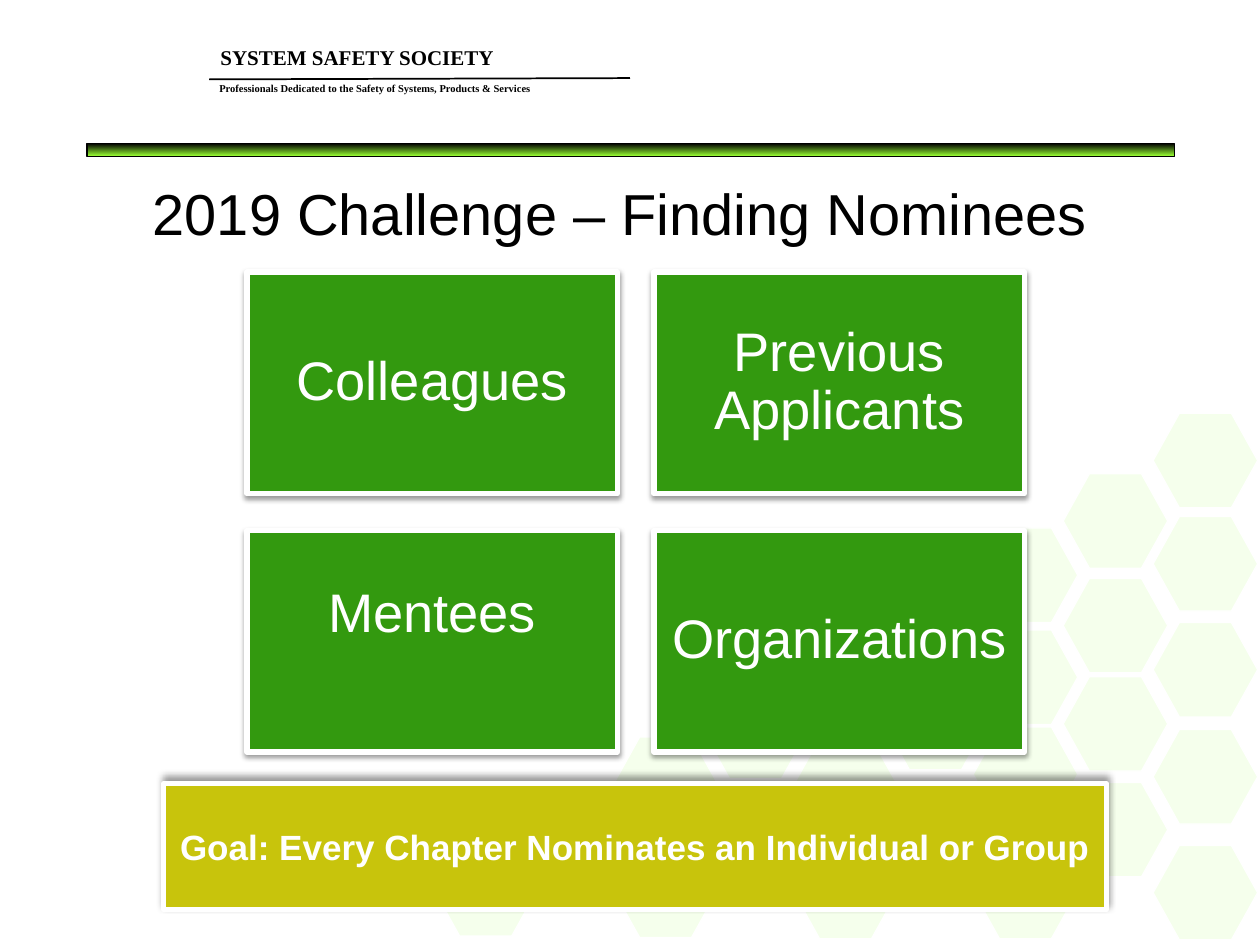
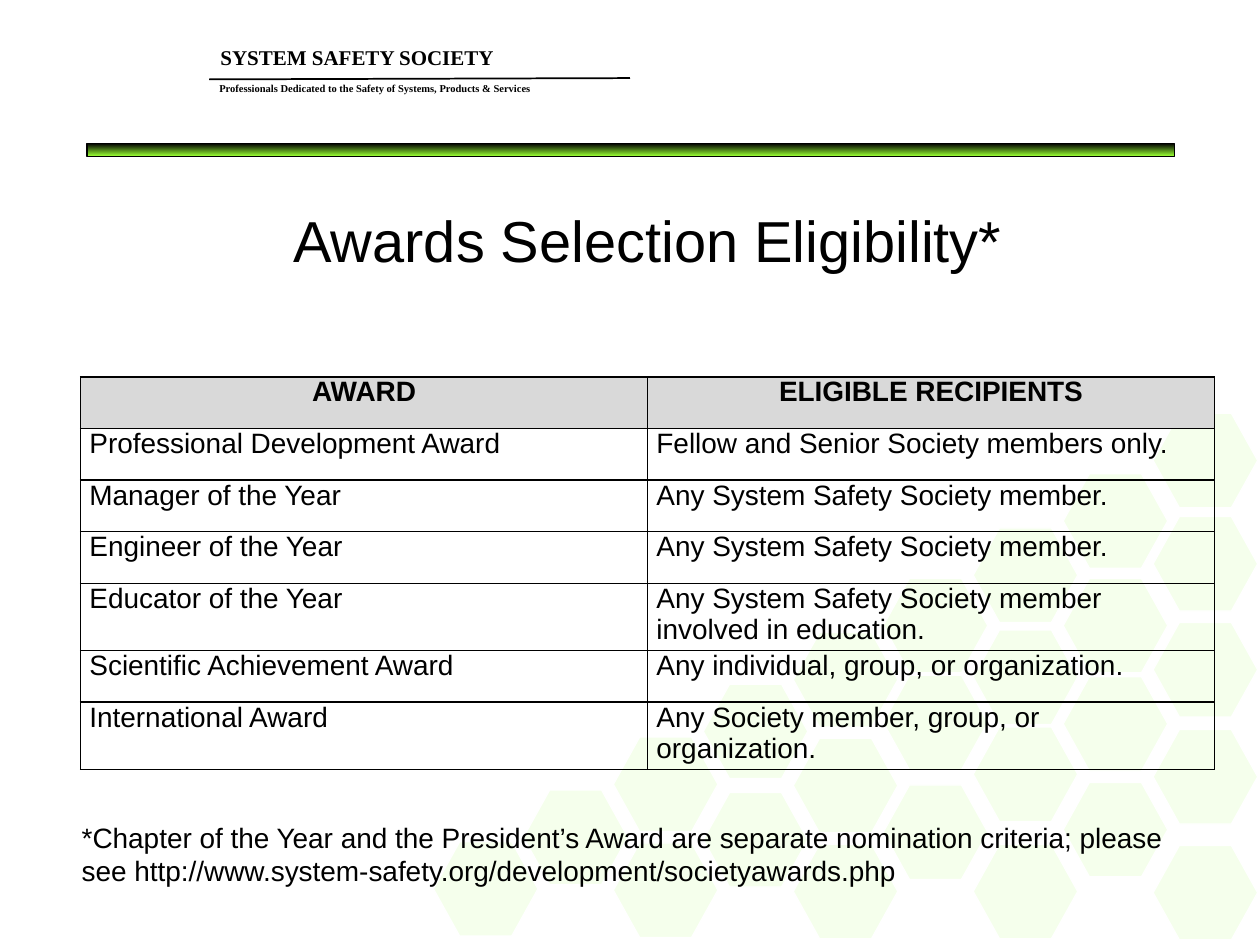
"""Build two award-nomination slides sharing a letterhead and a honeycomb background."""
from lxml import etree
from pptx import Presentation
from pptx.dml.color import RGBColor
from pptx.enum.shapes import MSO_CONNECTOR, MSO_SHAPE
from pptx.enum.text import MSO_ANCHOR, PP_ALIGN
from pptx.oxml.ns import qn
from pptx.util import Inches, Pt

RECTANGLE, HEXAGON = MSO_SHAPE.RECTANGLE, MSO_SHAPE.HEXAGON
STRAIGHT = MSO_CONNECTOR.STRAIGHT
TOP, MIDDLE = MSO_ANCHOR.TOP, MSO_ANCHOR.MIDDLE
LEFT, CENTER = PP_ALIGN.LEFT, PP_ALIGN.CENTER

BLACK = RGBColor(0x00, 0x00, 0x00)
WHITE = RGBColor(0xFF, 0xFF, 0xFF)
LIME = RGBColor(0x99, 0xFF, 0x33)
GREEN = RGBColor(0x33, 0x99, 0x0F)
OLIVE = RGBColor(0xC8, 0xC4, 0x0C)
GREY = RGBColor(0xD9, 0xD9, 0xD9)
SANS, SERIF = "Arial", "Times New Roman"

SOCIETY = "SYSTEM SAFETY SOCIETY"
TAGLINE = "Professionals Dedicated to the Safety of Systems, Products & Services"

CHALLENGE_TITLE = "2019 Challenge – Finding Nominees"
SOURCES = [["Colleagues", "Previous Applicants"], ["Mentees", "Organizations"]]
RAISED_SOURCE = "Mentees"
GOAL = "Goal: Every Chapter Nominates an Individual or Group"

ELIGIBILITY_TITLE = "Awards Selection Eligibility*"
AWARDS = [
    ("AWARD", "ELIGIBLE RECIPIENTS"),
    ("Professional Development Award", "Fellow and Senior Society members only."),
    ("Manager of the Year", "Any System Safety Society member."),
    ("Engineer of the Year", "Any System Safety Society member."),
    ("Educator of the Year", "Any System Safety Society member involved in education."),
    ("Scientific Achievement Award", "Any individual, group, or organization."),
    ("International Award", "Any Society member, group, or organization."),
]
FOOTNOTE = ("*Chapter of the Year and the President’s Award are separate nomination criteria; "
            "please see http://www.system-safety.org/development/societyawards.php")

COMB_LEFT, COMB_STEP = 3.44, 0.714
COMB_TOPS = [
    [6.68],
    [6.27],
    [5.85, 6.69],
    [5.43, 6.29],
    [5.02, 5.86, 6.7],
    [4.59, 5.36, 6.23],
    [4.19, 5, 5.77, 6.7],
    [3.76, 4.59, 5.37, 6.21],
    [3.28, 4.1, 4.94, 5.79, 6.71],
]
COVERED_CELLS = {(1, 0), (3, 1), (4, 0), (5, 0)}

PANEL_LEFT, PANEL_TOP = 1.96, 2.16
PANEL_WIDTH, PANEL_HEIGHT = 2.94, 1.76
PANEL_STEP_X, PANEL_STEP_Y = 3.23, 2.05


def set_text(frame, text, size, color=BLACK, font=SANS, bold=False, align=LEFT,
             anchor=TOP, margins=(0.1, 0.05, 0.1, 0.05)):
    frame.word_wrap = True
    frame.vertical_anchor = anchor
    (frame.margin_left, frame.margin_top,
     frame.margin_right, frame.margin_bottom) = map(Inches, margins)
    para = frame.paragraphs[0]
    para.text = text
    para.alignment = align
    para.font.size, para.font.name, para.font.bold = Pt(size), font, bold
    para.font.color.rgb = color
    return para


def add_text(page, place, text, size, **style):
    box = page.shapes.add_textbox(*map(Inches, place))
    return set_text(box.text_frame, text, size, **style)


def add_shape(page, kind, place, fill, line, line_width):
    shape = page.shapes.add_shape(kind, *map(Inches, place))
    shape.shadow.inherit = False
    shape.fill.solid()
    shape.fill.fore_color.rgb = fill
    shape.line.color.rgb = line
    shape.line.width = Pt(line_width)
    return shape


def add_panel(page, place, fill, opacity, blur, distance, angle):
    panel = add_shape(page, RECTANGLE, place, fill, WHITE, 3)
    effects = panel._element.spPr.find(qn("a:effectLst"))
    shadow = etree.SubElement(effects, qn("a:outerShdw"), blurRad=str(Pt(blur)),
                              dist=str(Pt(distance)), dir=str(angle * 60000), rotWithShape="0")
    color = etree.SubElement(shadow, qn("a:srgbClr"), val=str(BLACK))
    etree.SubElement(color, qn("a:alpha"), val=str(opacity * 1000))
    return panel


def add_letterhead(page):
    band = add_shape(page, RECTANGLE, (0.69, 1.14, 8.63, 0.1), LIME, BLACK, 0.75)
    band.fill.gradient()
    band.fill.gradient_angle = 270
    for stop, color in zip(band.fill.gradient_stops, (BLACK, LIME)):
        stop.color.rgb = color
    rule = page.shapes.add_connector(STRAIGHT, *map(Inches, (1.66, 0.63, 5, 0.62)))
    rule.line.color.rgb = BLACK
    rule.line.width = Pt(1)
    etree.SubElement(rule._element.spPr, qn("a:effectLst"))
    style = dict(font=SERIF, bold=True, margins=(0.07, 0.04, 0.07, 0.04))
    add_text(page, (1.68, 0.31, 3.8, 0.28), SOCIETY, 12, **style)
    add_text(page, (1.67, 0.61, 3.91, 0.17), TAGLINE, 6, **style)


def add_honeycomb(page, skipped):
    for column, tops in enumerate(COMB_TOPS):
        for row, top in enumerate(tops):
            if (column, row) in skipped:
                continue
            place = (COMB_LEFT + column * COMB_STEP, top, 0.83, 0.75)
            cell = add_shape(page, HEXAGON, place, LIME, WHITE, 0.75)
            cell.adjustments[0] = 0.278
            color = cell._element.spPr.find(qn("a:solidFill")).find(qn("a:srgbClr"))
            etree.SubElement(color, qn("a:alpha"), val="9000")


def add_page(deck, title, title_place, skipped=()):
    page = deck.slides.add_slide(deck.slide_layouts[6])
    add_letterhead(page)
    add_honeycomb(page, skipped)
    add_text(page, title_place, title, 33, align=CENTER)
    return page


def add_sources(page):
    for row, names in enumerate(SOURCES):
        for column, name in enumerate(names):
            place = (PANEL_LEFT + column * PANEL_STEP_X, PANEL_TOP + row * PANEL_STEP_Y,
                     PANEL_WIDTH, PANEL_HEIGHT)
            panel = add_panel(page, place, GREEN, 38, 3.1, 1.6, 90)
            bottom = 0.55 if name == RAISED_SOURCE else 0.13
            para = set_text(panel.text_frame, name, 31, color=WHITE, align=CENTER,
                            anchor=MIDDLE, margins=(0.13, 0.13, 0.13, bottom))
            para.line_spacing = 0.9


def add_borders(cell):
    properties = cell._tc.get_or_add_tcPr()
    for side in ("lnL", "lnR", "lnT", "lnB"):
        border = etree.SubElement(properties, qn(f"a:{side}"), w=str(Pt(1)))
        fill = etree.SubElement(border, qn("a:solidFill"))
        etree.SubElement(fill, qn("a:srgbClr"), val=str(BLACK))


def add_awards(page):
    row_height = 0.41
    place = (0.64, 2.99, 9, row_height * len(AWARDS))
    table = page.shapes.add_table(len(AWARDS), 2, *map(Inches, place)).table
    table.first_row = table.horz_banding = False
    for row, texts in enumerate(AWARDS):
        table.rows[row].height = Inches(row_height)
        header = row == 0
        for column, text in enumerate(texts):
            cell = table.cell(row, column)
            set_text(cell.text_frame, text, 16, bold=header, align=CENTER if header else LEFT)
            cell.margin_left = cell.margin_right = Inches(0.07)
            cell.margin_top = cell.margin_bottom = 0
            add_borders(cell)
            if header:
                cell.fill.solid()
                cell.fill.fore_color.rgb = GREY
            else:
                cell.fill.background()


def main():
    deck = Presentation()
    deck.slide_width, deck.slide_height = Inches(10), Inches(7.5)

    challenge = add_page(deck, CHALLENGE_TITLE, (0.42, 1.36, 9, 1.25), COVERED_CELLS)
    add_sources(challenge)
    goal = add_panel(challenge, (1.3, 6.22, 7.48, 1), OLIVE, 40, 4, 3, 270)
    set_text(goal.text_frame, GOAL, 20, color=WHITE, bold=True, align=CENTER, anchor=MIDDLE)

    eligibility = add_page(deck, ELIGIBILITY_TITLE, (0.64, 1.58, 9, 0.9))
    add_awards(eligibility)
    add_text(eligibility, (0.55, 6.46, 8.95, 0.64), FOOTNOTE, 16)

    deck.save("out.pptx")


if __name__ == "__main__":
    main()
